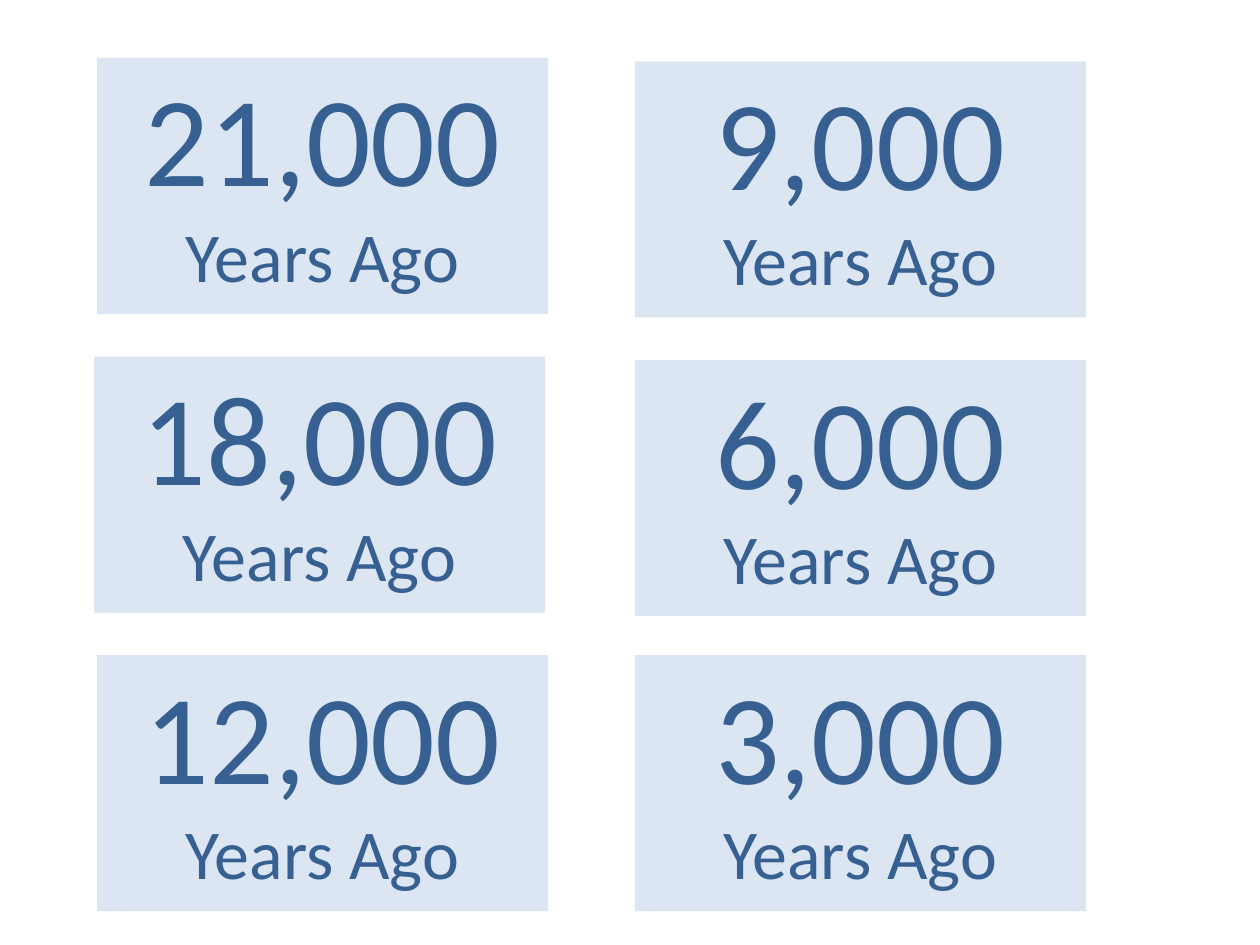
from pptx import Presentation
from pptx.dml.color import RGBColor
from pptx.enum.shapes import MSO_SHAPE
from pptx.enum.text import MSO_AUTO_SIZE, PP_ALIGN
from pptx.util import Cm, Pt

PALE_BLUE = RGBColor(0xDC, 0xE6, 0xF2)
DARK_BLUE = RGBColor(0x37, 0x60, 0x92)

CARD_WIDTH, CARD_HEIGHT = 9.09, 5.16
LABEL_HEIGHT, LABEL_RISE = 5.08, 0.1
DATES = [
    ("21,000", 1.96, 1.17),
    ("18,000", 1.9, 7.19),
    ("12,000", 1.96, 13.21),
    ("9,000", 12.8, 1.24),
    ("6,000", 12.8, 7.26),
    ("3,000", 12.8, 13.21),
]


def write_text(paragraph, text, *, size, color=DARK_BLUE, font="Calibri", align=PP_ALIGN.CENTER):
    paragraph.alignment = align
    run = paragraph.add_run()
    run.text = text
    run.font.name = font
    run.font.size = Pt(size)
    run.font.color.rgb = color


def add_date_card(slide, years, left, top, width, height):
    card = slide.shapes.add_shape(
        MSO_SHAPE.RECTANGLE, Cm(left), Cm(top), Cm(width), Cm(height)
    )
    card.shadow.inherit = False
    card.fill.solid()
    card.fill.fore_color.rgb = PALE_BLUE
    card.line.fill.background()

    label_width = 7.75 if len(years) == 6 else 6.43
    label = slide.shapes.add_textbox(
        Cm(left + (width - label_width) / 2),
        Cm(top - LABEL_RISE),
        Cm(label_width),
        Cm(LABEL_HEIGHT),
    )
    frame = label.text_frame
    frame.word_wrap = False
    frame.auto_size = MSO_AUTO_SIZE.SHAPE_TO_FIT_TEXT
    write_text(frame.paragraphs[0], years, size=73)
    write_text(frame.add_paragraph(), "Years Ago", size=40)


def main():
    presentation = Presentation()
    presentation.slide_width = Cm(25.4)
    presentation.slide_height = Cm(19.05)
    slide = presentation.slides.add_slide(presentation.slide_layouts[6])
    for years, left, top in DATES:
        add_date_card(slide, years, left, top, CARD_WIDTH, CARD_HEIGHT)
    presentation.save("out.pptx")


if __name__ == "__main__":
    main()
